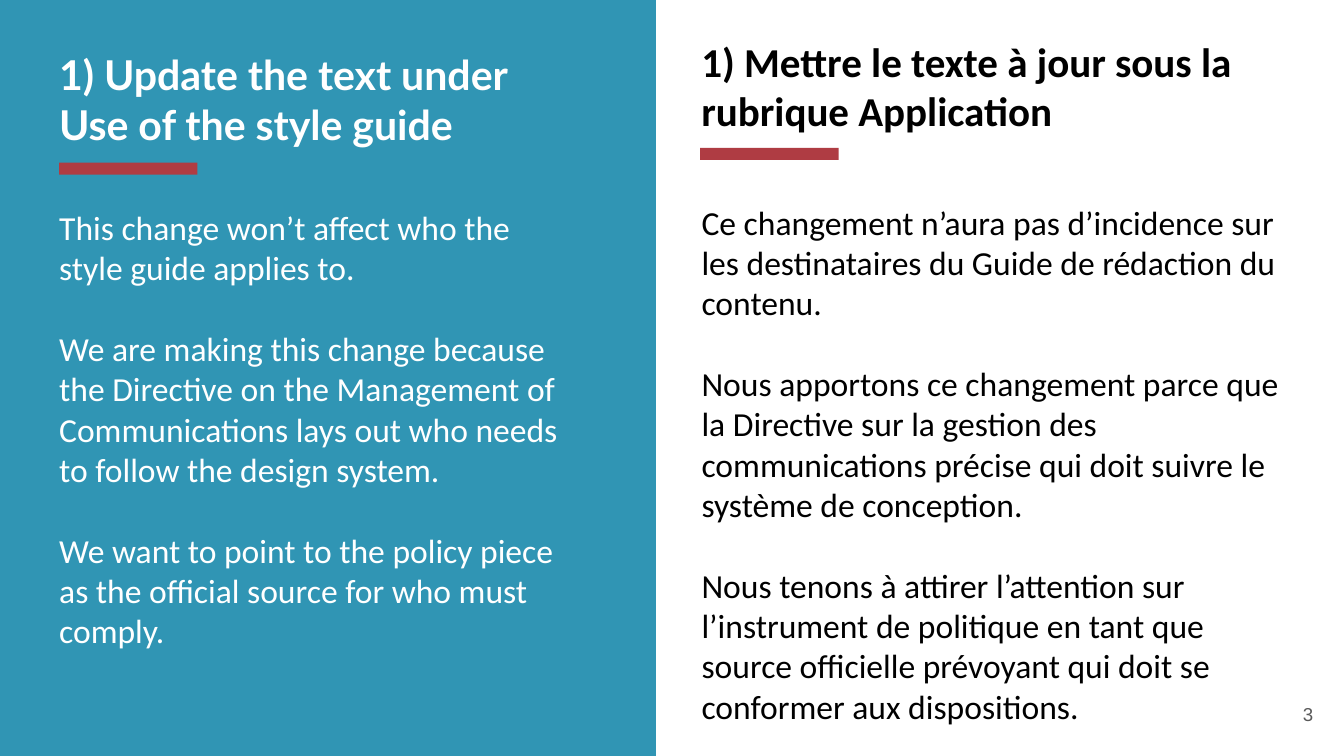
import pptx
import pptx.util
import pptx.dml.color
import pptx.enum.shapes
import pptx.enum.text
import lxml.etree

BLUE = pptx.dml.color.RGBColor(0x30, 0x95, 0xB4)
RED = pptx.dml.color.RGBColor(0xAF, 0x3C, 0x43)
WHITE = pptx.dml.color.RGBColor(0xFF, 0xFF, 0xFF)
BLACK = pptx.dml.color.RGBColor(0, 0, 0)
GREY = pptx.dml.color.RGBColor(0x59, 0x59, 0x59)

SLIDE_WIDTH = 10
SLIDE_HEIGHT = SLIDE_WIDTH * 9 / 16
LEFT_COLUMN, RIGHT_COLUMN = 0.34, 5.12
INSET = 0.1
HEADING_HEIGHT = 1.57
BODY_GAP = 21.6

ENGLISH_HEADING = "1) Update the text under \vUse of the style guide"
ENGLISH_BODY = [
    "This change won’t affect who the style guide applies to.",
    "We are making this change because the Directive on the Management of "
    "Communications lays out who needs to follow the design system.",
    "We want to point to the policy piece as the official source for who must comply.",
]
FRENCH_HEADING = "1) Mettre le texte à jour sous la rubrique Application"
FRENCH_BODY = [
    "Ce changement n’aura pas d’incidence sur les destinataires du Guide de "
    "rédaction du contenu.",
    "Nous apportons ce changement parce que la Directive sur la gestion des "
    "communications précise qui doit suivre le système de conception.",
    "Nous tenons à attirer l’attention sur l’instrument de politique en tant que "
    "source officielle prévoyant qui doit se conformer aux dispositions.",
]


def place(shape, left, top, width, height):
    shape.left, shape.top, shape.width, shape.height = (
        pptx.util.Inches(length) for length in (left, top, width, height)
    )


def add_rectangle(slide, box, color):
    shape = slide.shapes.add_shape(
        pptx.enum.shapes.MSO_SHAPE.RECTANGLE, *map(pptx.util.Inches, box)
    )
    shape.shadow.inherit = False
    shape.fill.solid()
    shape.fill.fore_color.rgb = color
    shape.line.fill.background()
    return shape


def add_text_box(slide):
    return slide.shapes.add_textbox(0, 0, 0, 0)


def remove_bullet(paragraph):
    properties = paragraph._p.get_or_add_pPr()
    properties.set("marL", "0")
    properties.set("indent", "0")
    lxml.etree.SubElement(properties, pptx.oxml.ns.qn("a:buNone"))


def write_text(shape, box, texts, font_name, size, color, bold=False, gap=0,
               alignment=pptx.enum.text.PP_ALIGN.LEFT,
               anchor=pptx.enum.text.MSO_ANCHOR.TOP):
    place(shape, *box)
    frame = shape.text_frame
    frame.word_wrap = True
    frame.auto_size = pptx.enum.text.MSO_AUTO_SIZE.NONE
    frame.vertical_anchor = anchor
    frame.margin_left = frame.margin_right = pptx.util.Inches(INSET)
    frame.margin_top = frame.margin_bottom = pptx.util.Inches(INSET)
    frame.text = "\n".join(texts)
    for index, paragraph in enumerate(frame.paragraphs):
        paragraph.alignment = alignment
        paragraph.space_before = pptx.util.Pt(gap if index else 0)
        paragraph.space_after = pptx.util.Pt(0)
        remove_bullet(paragraph)
        for run in paragraph.runs:
            run.font.name = font_name
            run.font.size = pptx.util.Pt(size)
            run.font.bold = bold
            run.font.color.rgb = color


def write_heading(shape, box, text, font_name, color):
    write_text(shape, box, [text], font_name, 22, color, bold=True)


def write_body(shape, box, texts, color):
    write_text(shape, box, texts, "Calibri", 18, color, gap=BODY_GAP)


def add_accent(slide, left, top):
    add_rectangle(slide, (left, top, 1.03, 0.09), RED)


def add_panel(slide):
    panel = add_rectangle(slide, (-0.05, -0.01, 4.93, 5.64), BLUE)
    slide.shapes._spTree.insert(2, panel._element)


def main():
    presentation = pptx.Presentation()
    presentation.slide_width = pptx.util.Inches(SLIDE_WIDTH)
    presentation.slide_height = pptx.util.Inches(SLIDE_HEIGHT)
    slide = presentation.slides.add_slide(
        presentation.slide_layouts.get_by_name("Two Content")
    )
    title, english_body, french_body = slide.placeholders

    add_panel(slide)
    write_heading(title, (LEFT_COLUMN, 0.27, 4.23, HEADING_HEIGHT),
                  ENGLISH_HEADING, "Lato", WHITE)
    write_body(english_body, (LEFT_COLUMN, 1.44, 4.02, 3.84), ENGLISH_BODY, WHITE)
    add_accent(slide, 0.44, 1.21)

    write_heading(add_text_box(slide), (RIGHT_COLUMN, 0.17, 4.71, HEADING_HEIGHT),
                  FRENCH_HEADING, "Calibri", BLACK)
    write_body(french_body, (RIGHT_COLUMN, 1.4, 4.61, 4.14), FRENCH_BODY, BLACK)
    add_accent(slide, 5.21, 1.1)

    write_text(add_text_box(slide), (9.27, 5.1, 0.6, 0.43), ["3"], "Arial", 10, GREY,
               alignment=pptx.enum.text.PP_ALIGN.RIGHT,
               anchor=pptx.enum.text.MSO_ANCHOR.MIDDLE)
    presentation.save("out.pptx")


if __name__ == "__main__":
    main()
